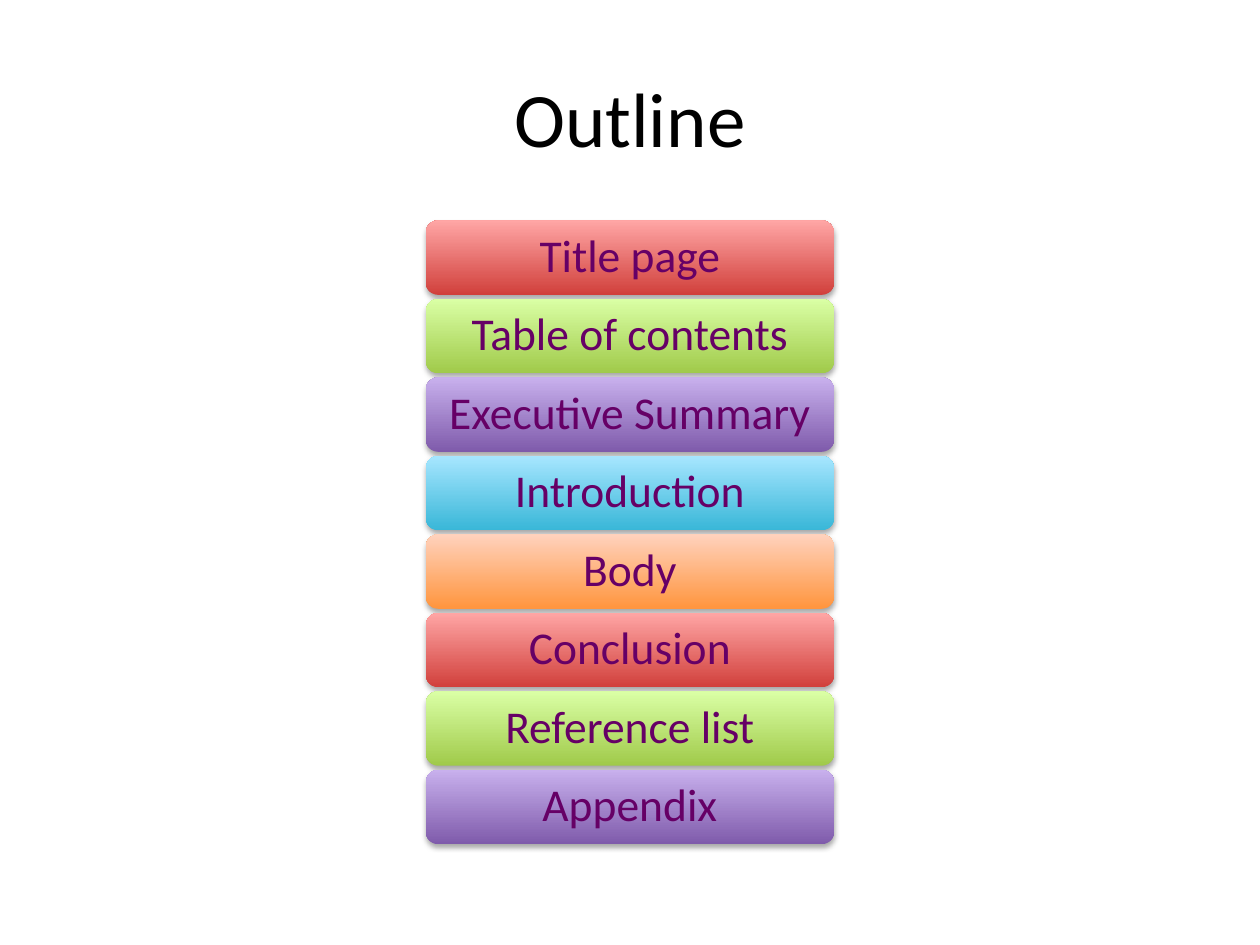
from lxml.etree import SubElement
from pptx import Presentation
from pptx.dml.color import RGBColor
from pptx.enum.shapes import MSO_SHAPE as Shape
from pptx.enum.text import MSO_ANCHOR as Anchor, PP_ALIGN as Align
from pptx.oxml.ns import qn
from pptx.util import Inches, Pt


def color(value):
    return RGBColor.from_string(value)


def set_format(target, values):
    for name, value in values.items():
        setattr(target, name, value)


class OutlineSlide:
    TITLE_FONT = {"name": "Calibri", "size": Pt(44)}
    BAR_FONT = {"name": "Calibri", "size": Pt(26)}
    FRAME = {"word_wrap": True, "vertical_anchor": Anchor.MIDDLE}
    BAR_MARGINS = {"margin_left": Inches(0.14), "margin_right": Inches(0.14)}

    def __init__(self, presentation):
        self.slide = presentation.slides.add_slide(presentation.slide_layouts[6])

    def label(self, shape, text, font, text_color, paragraph_format):
        set_format(shape.text_frame, self.FRAME)
        paragraph = shape.text_frame.paragraphs[0]
        set_format(paragraph, {"alignment": Align.CENTER, **paragraph_format})
        run = paragraph.add_run()
        run.text = text
        set_format(run.font, font)
        run.font.color.rgb = color(text_color)

    def title(self, text, *box):
        shape = self.slide.shapes.add_textbox(*map(Inches, box))
        self.label(shape, text, self.TITLE_FONT, "000000", {})

    def shadow(self, shape):
        shape.shadow.inherit = False
        effects = shape._element.spPr.find(qn("a:effectLst"))
        outer = SubElement(effects, qn("a:outerShdw"), blurRad=str(Pt(3.1)),
                           dist=str(Pt(1.8)), dir="5400000", rotWithShape="0")
        tint = SubElement(outer, qn("a:srgbClr"), val="000000")
        SubElement(tint, qn("a:alpha"), val="35000")

    def bar(self, text, gradient, *box):
        shape = self.slide.shapes.add_shape(Shape.ROUNDED_RECTANGLE, *map(Inches, box))
        shape.fill.gradient()
        shape.fill.gradient_angle = 90
        for stop, value in zip(shape.fill.gradient_stops, gradient):
            stop.color.rgb = color(value)
        shape.line.fill.background()
        self.shadow(shape)
        set_format(shape.text_frame, self.BAR_MARGINS)
        self.label(shape, text, self.BAR_FONT, "660066", {"line_spacing": 0.9})


# Bottom and top colour of each bar, repeated in order
GRADIENTS = [("D1403C", "FFA6A5"), ("A0CA4A", "DAFFA5"), ("7F5BAB", "C8B0ED"),
             ("39B7D8", "A7E6FF"), ("FF953E", "FFD2BD")]
SECTIONS = ["Title page", "Table of contents", "Executive Summary", "Introduction",
            "Body", "Conclusion", "Reference list", "Appendix"]
FIRST_TOP, LAST_TOP = 1.75, 6.11
BAR_LEFT, BAR_WIDTH, BAR_HEIGHT = 3.38, 3.24, 0.59


def main():
    presentation = Presentation()
    set_format(presentation, {"slide_width": Inches(10), "slide_height": Inches(7.5)})
    outline = OutlineSlide(presentation)

    # Title
    outline.title("Outline", 0.5, 0.3, 9, 1.25)

    # Stack of section bars
    step = (LAST_TOP - FIRST_TOP) / (len(SECTIONS) - 1)
    for index, section in enumerate(SECTIONS):
        outline.bar(section, GRADIENTS[index % len(GRADIENTS)],
                    BAR_LEFT, FIRST_TOP + index * step, BAR_WIDTH, BAR_HEIGHT)

    presentation.save("out.pptx")


if __name__ == "__main__":
    main()
